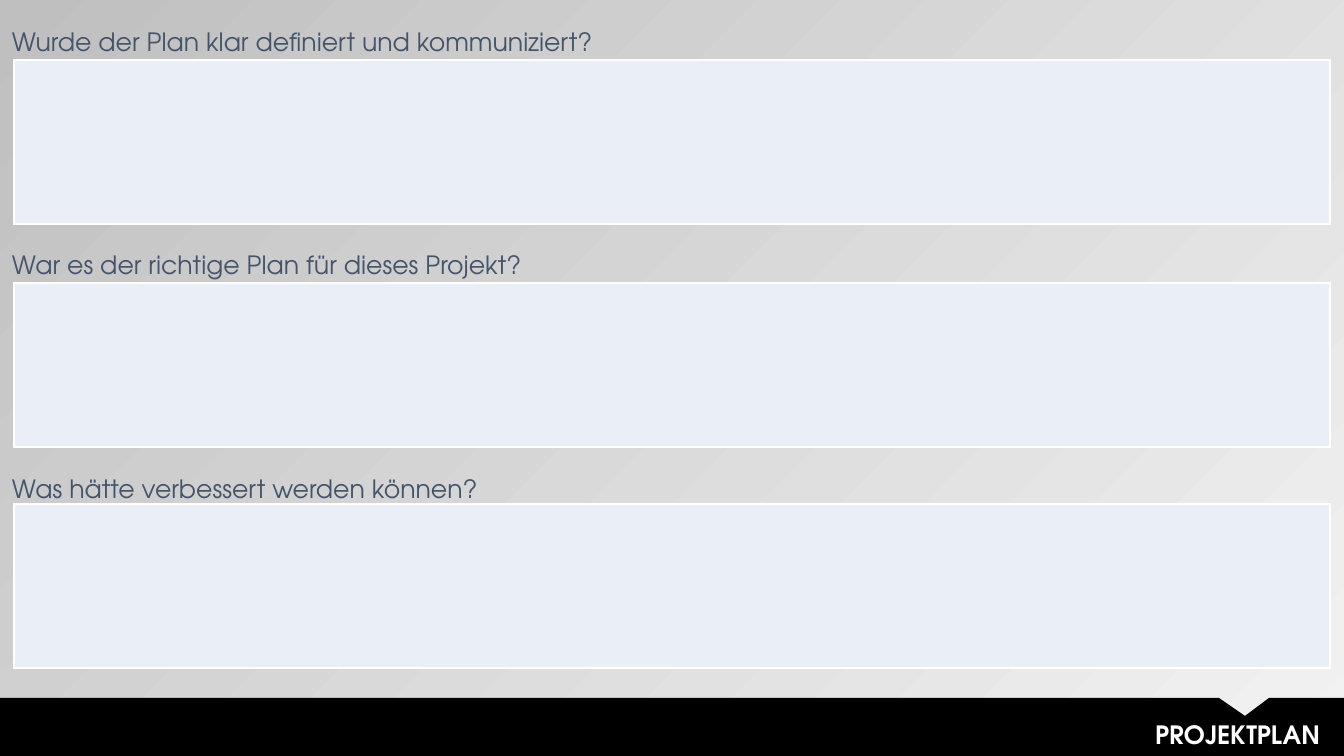
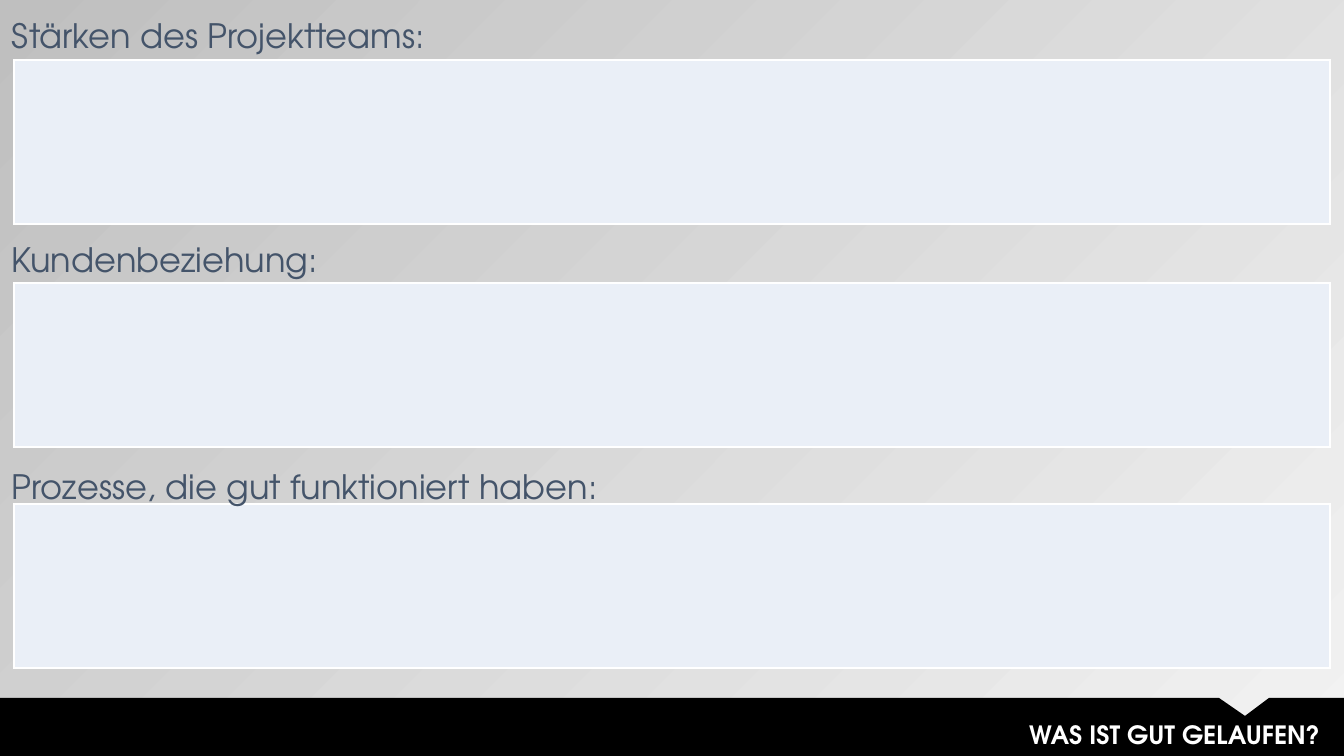
from lxml.etree import SubElement
from pptx import Presentation
from pptx.dml.color import RGBColor
from pptx.enum.text import MSO_AUTO_SIZE, PP_ALIGN
from pptx.oxml import parse_xml
from pptx.oxml.ns import nsdecls
from pptx.util import Emu, Pt

SCALE = 914400 / 100.8  # EMU in one px
WIDTH, HEIGHT = 1344, 756
FONT = "TeX Gyre Adventor"
COLORS = {
    "light": "F2F2F2",
    "dark": "BFBFBF",
    "band": "000000",
    "title": "FFFFFF",
    "label": "44546A",
    "box": "EAEFF7",
    "edge": "FFFFFF",
}
BAND = [(0, 698), (1219, 698), (1245, 716), (1269, 698),
        (WIDTH, 698), (WIDTH, HEIGHT), (0, HEIGHT)]
BOX_TOPS = (60, 283, 504)

# Title, label size, then per label: text, top, height, line spacing
SLIDES = [
    ("PROJEKTPLAN", 18, [
        ("Wurde der Plan klar definiert und kommuniziert?", 20, 41, Pt(21.5)),
        ("War es der richtige Plan für dieses Projekt?", 243, 41, Pt(21.5)),
        ("Was hätte verbessert werden können?", 461, 45, 1.2),
    ]),
    ("WAS IST GUT GELAUFEN?", 24, [
        ("Stärken des Projektteams:", 19, 44, Pt(21.5)),
        ("Kundenbeziehung:", 243, 44, Pt(21.5)),
        ("Prozesse, die gut funktioniert haben:", 452, 57, 1.2),
    ]),
]


def px(n):
    return Emu(round(n * SCALE))


def color(name):
    return RGBColor.from_string(COLORS[name])


def set_back(master):
    """Diagonal gradient, light at the bottom right."""
    fill = master.background.fill
    fill.gradient()
    fill.gradient_angle = 135
    for stop, name in zip(fill.gradient_stops, ("light", "dark")):
        stop.color.rgb = color(name)


def add_text(slide, text, area, size, name):
    """One-line text box; returns its frame and paragraph."""
    frame = slide.shapes.add_textbox(*map(px, area)).text_frame
    frame.word_wrap = True
    frame.auto_size = MSO_AUTO_SIZE.SHAPE_TO_FIT_TEXT
    para = frame.paragraphs[0]
    para.text = text
    para.font.name = FONT
    para.font.size = Pt(size)
    para.font.color.rgb = color(name)
    return frame, para


def add_band(slide, title):
    """Black footer band with a notch and the slide title."""
    form = slide.shapes.build_freeform(*BAND[0], scale=SCALE)
    form.add_line_segments(BAND[1:], close=True)
    band = form.convert_to_shape()
    band.shadow.inherit = False
    band.fill.solid()
    band.fill.fore_color.rgb = color("band")
    band.line.fill.background()
    _, para = add_text(slide, title, (417, 714, 913, 40), 18, "title")
    para.alignment = PP_ALIGN.RIGHT
    para.font.bold = True


def add_label(slide, text, top, height, spacing, size):
    frame, para = add_text(slide, text, (0, top, 769, height), size, "label")
    frame.margin_left = frame.margin_right = px(12)
    frame.margin_top = frame.margin_bottom = px(6)
    para.line_spacing = spacing
    para.space_before = Pt(size * 0.2)


def add_box(slide, top):
    """Answer box: a table of one cell with a thin border."""
    area = map(px, (14, top, 1316, 164))
    table = slide.shapes.add_table(1, 1, *area).table
    table.first_row = table.horz_banding = False
    cell = table.cell(0, 0)
    cell.fill.solid()
    cell.fill.fore_color.rgb = color("box")
    props = cell._tc.get_or_add_tcPr()
    for spot, side in enumerate("LRTB"):
        line = parse_xml(f'<a:ln{side} {nsdecls("a")} w="{Pt(1)}"><a:solidFill/></a:ln{side}>')
        SubElement(line[0], line[0].tag.replace("solidFill", "srgbClr"), val=COLORS["edge"])
        props.insert(spot, line)


def main():
    deck = Presentation()
    deck.slide_width, deck.slide_height = px(WIDTH), px(HEIGHT)
    set_back(deck.slide_master)
    for title, size, labels in SLIDES:
        slide = deck.slides.add_slide(deck.slide_layouts[6])
        add_band(slide, title)
        for top, label in zip(BOX_TOPS, labels):
            add_box(slide, top)
            add_label(slide, *label, size)
    deck.save("out.pptx")


if __name__ == "__main__":
    main()
